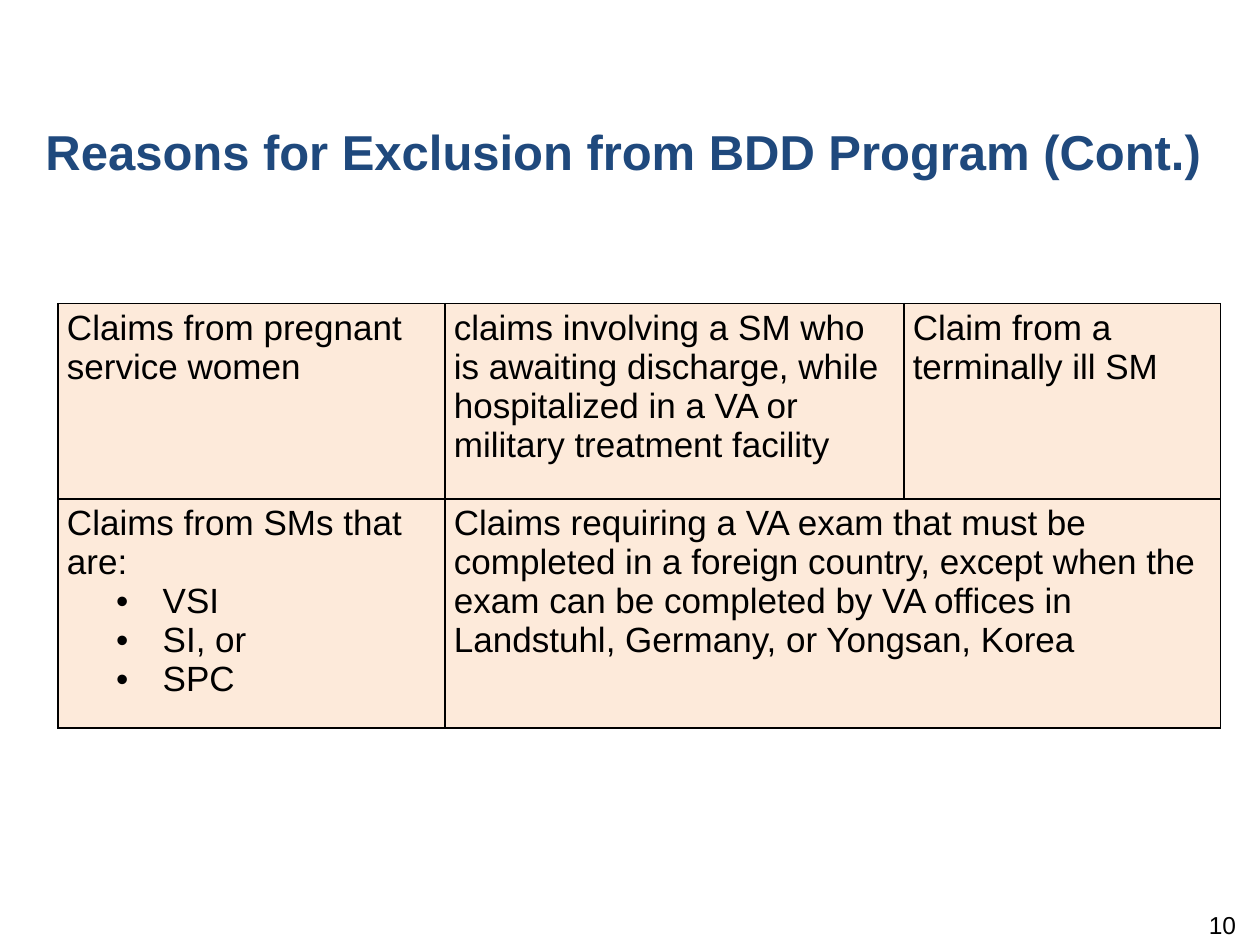
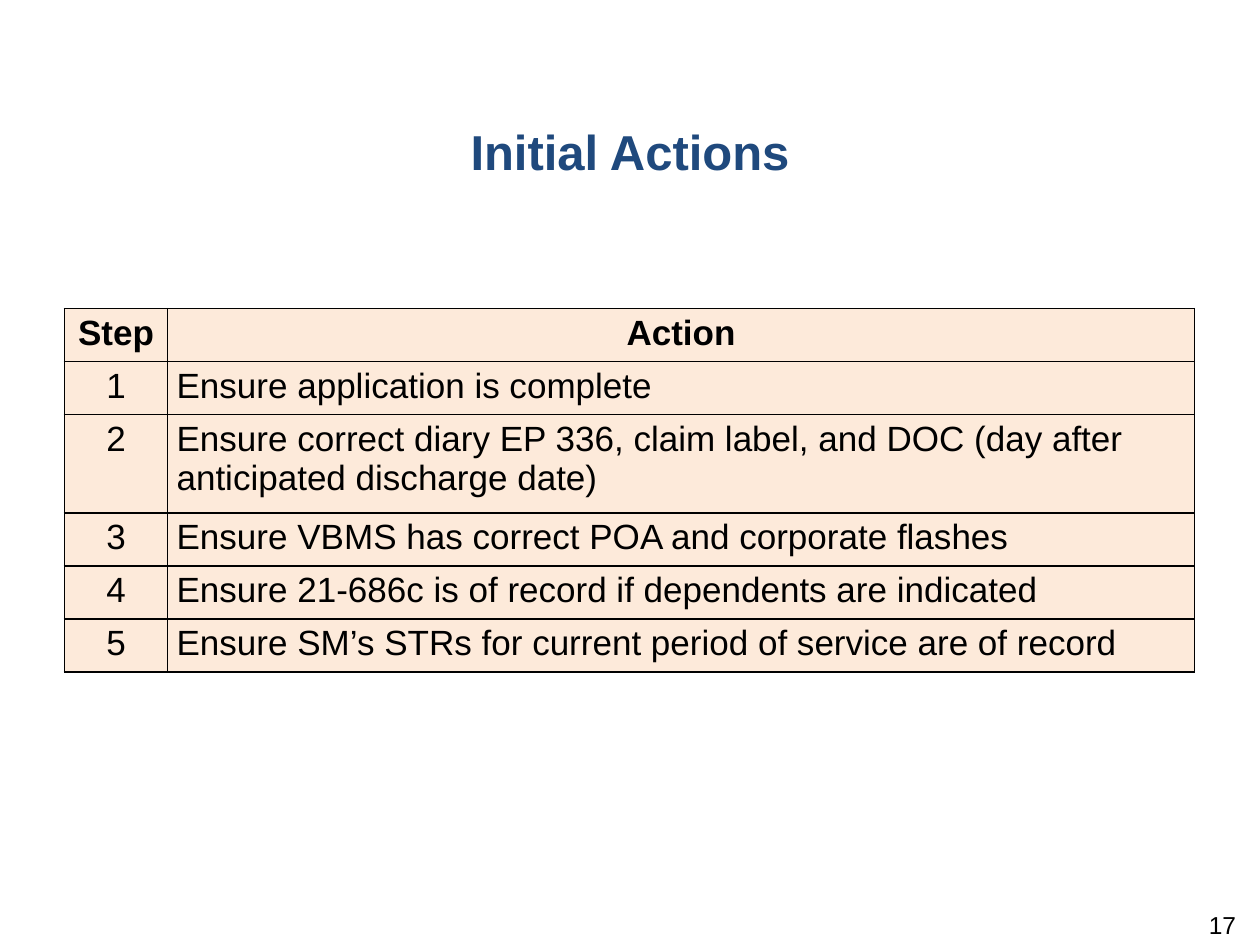
from dataclasses import dataclass

from lxml.etree import SubElement
from pptx import Presentation
from pptx.dml.color import RGBColor
from pptx.enum.text import MSO_ANCHOR as Anchor, MSO_AUTO_SIZE as AutoSize, PP_ALIGN as Align
from pptx.oxml.ns import qn
from pptx.util import Cm, Pt


@dataclass(frozen=True)
class Theme:
    font: str = "Arial"
    title_color: str = "1F497D"
    text_color: str = "000000"
    cell_color: str = "FDEADA"
    border_color: str = "000000"
    title_size: int = 28
    table_size: int = 20
    number_size: int = 14
    border_width: int = 1


@dataclass(frozen=True)
class Box:
    left: float
    top: float
    width: float = 0
    height: float = 0

    def lengths(self):
        return [Cm(value) for value in (self.left, self.top, self.width, self.height)]


@dataclass(frozen=True)
class Entry:
    text: str
    bullets: tuple = ()
    align: Align = Align.LEFT
    bold: bool = False
    span: int = 1


THEME = Theme()
TITLE_LEFT, TITLE_TOP, SLIDE_WIDTH, SLIDE_HEIGHT = 0, 2.21, 25.4, 19.05
NUMBER_BOX = Box(19.25, 18.34, 5.92, 1.02)
TITLE_MARGINS = dict(margin_left=Cm(0.25), margin_top=Cm(0.23),
                     margin_right=Cm(0.25), margin_bottom=Cm(0.13))
NUMBER_MARGINS = dict(TITLE_MARGINS, margin_top=Cm(0))
CELL_MARGINS = dict(margin_left=Cm(0.18), margin_top=Cm(0.1),
                    margin_right=Cm(0.18), margin_bottom=Cm(0.1))
BULLET_INDENT = dict(marL=Cm(1.93), indent=Cm(-0.94))

EXCLUSIONS = [
    [Entry("Claims from pregnant service women"),
     Entry("claims involving a SM who is awaiting discharge, while hospitalized "
           "in a VA or military treatment facility"),
     Entry("Claim from a terminally ill SM")],
    [Entry("Claims from SMs that are:", bullets=("VSI", "SI, or", "SPC")),
     Entry("Claims requiring a VA exam that must be completed in a foreign country, "
           "except when the exam can be completed by VA offices in Landstuhl, "
           "Germany, or Yongsan, Korea", span=2)],
]
ACTIONS = [
    "Ensure application is complete",
    "Ensure correct diary EP 336, claim label, and DOC (day after anticipated discharge date)",
    "Ensure VBMS has correct POA and corporate flashes",
    "Ensure 21-686c is of record if dependents are indicated",
    "Ensure SM’s STRs for current period of service are of record",
]


def apply(target, formats):
    for name, value in formats.items():
        setattr(target, name, value)


def write(paragraph, text, size, color=THEME.text_color, bold=False, align=Align.LEFT):
    run = paragraph.add_run()
    run.text = text
    paragraph.alignment = align
    apply(run.font, dict(name=THEME.font, size=Pt(size), bold=bold))
    run.font.color.rgb = RGBColor.from_string(color)


def add_bullet(paragraph):
    properties = paragraph._p.get_or_add_pPr()
    for name, value in BULLET_INDENT.items():
        properties.set(name, str(value))
    SubElement(properties, qn("a:buFont"), typeface=THEME.font)
    SubElement(properties, qn("a:buChar"), char="•")


def add_borders(cell):
    properties = cell._tc.get_or_add_tcPr()
    for side in ("lnL", "lnR", "lnT", "lnB"):
        line = SubElement(properties, qn(f"a:{side}"), w=str(Pt(THEME.border_width)))
        fill = SubElement(line, qn("a:solidFill"))
        SubElement(fill, qn("a:srgbClr"), val=THEME.border_color)


def style_cell(cell):
    add_borders(cell)
    cell.fill.solid()
    cell.fill.fore_color.rgb = RGBColor.from_string(THEME.cell_color)
    apply(cell, dict(CELL_MARGINS, vertical_anchor=Anchor.TOP))


def fill_cell(cell, entry):
    frame = cell.text_frame
    write(frame.paragraphs[0], entry.text, THEME.table_size,
          bold=entry.bold, align=entry.align)
    for text in entry.bullets:
        paragraph = frame.add_paragraph()
        add_bullet(paragraph)
        write(paragraph, text, THEME.table_size)


def add_grid(slide, left, top, widths, heights, entries):
    box = Box(left, top, sum(widths), sum(heights))
    table = slide.shapes.add_table(len(heights), len(widths), *box.lengths()).table
    apply(table, dict(first_row=False, horz_banding=False))
    for column, width in zip(table.columns, widths):
        column.width = Cm(width)
    for row, height in zip(table.rows, heights):
        row.height = Cm(height)
    for cell in table.iter_cells():
        style_cell(cell)
    for row_index, row_entries in enumerate(entries):
        column_index = 0
        for entry in row_entries:
            cell = table.cell(row_index, column_index)
            column_index += entry.span
            if entry.span > 1:
                cell.merge(table.cell(row_index, column_index - 1))
            fill_cell(cell, entry)


def add_title(slide, text, height):
    title = slide.shapes.title
    box = Box(TITLE_LEFT, TITLE_TOP, SLIDE_WIDTH, height)
    apply(title, dict(zip(("left", "top", "width", "height"), box.lengths())))
    apply(title.text_frame, dict(TITLE_MARGINS, word_wrap=True, auto_size=AutoSize.NONE,
                                 vertical_anchor=Anchor.TOP))
    write(title.text_frame.paragraphs[0], text, THEME.title_size,
          THEME.title_color, bold=True, align=Align.CENTER)


def add_number(slide, number):
    frame = slide.shapes.add_textbox(*NUMBER_BOX.lengths()).text_frame
    apply(frame, dict(NUMBER_MARGINS, word_wrap=True, vertical_anchor=Anchor.TOP))
    paragraph = frame.paragraphs[0]
    paragraph.space_after = Pt(4.5)
    write(paragraph, str(number), THEME.number_size, align=Align.RIGHT)


def add_titled_slide(presentation, title, title_height, number):
    slide = presentation.slides.add_slide(presentation.slide_layouts[5])
    add_title(slide, title, title_height)
    add_number(slide, number)
    return slide


def add_exclusions_slide(presentation):
    slide = add_titled_slide(
        presentation, "Reasons for Exclusion from BDD Program (Cont.) ", 3.02, 10)
    add_grid(slide, 1.17, 6.12, [7.8, 9.25, 6.38], [3.94, 4.62], EXCLUSIONS)


def add_actions_slide(presentation):
    slide = add_titled_slide(presentation, "Initial Actions", 1.63, 17)
    entries = [[Entry(text, align=Align.CENTER, bold=True) for text in ("Step", "Action")]]
    entries += [[Entry(str(step), align=Align.CENTER), Entry(action)]
                for step, action in enumerate(ACTIONS, 1)]
    single, double = 1.07, 1.98
    heights = [single, single, double, single, single, single]
    add_grid(slide, 1.3, 6.22, [2.08, 20.7], heights, entries)


def main():
    presentation = Presentation()
    apply(presentation, dict(slide_width=Cm(SLIDE_WIDTH), slide_height=Cm(SLIDE_HEIGHT)))
    add_exclusions_slide(presentation)
    add_actions_slide(presentation)
    presentation.save("out.pptx")


if __name__ == "__main__":
    main()
